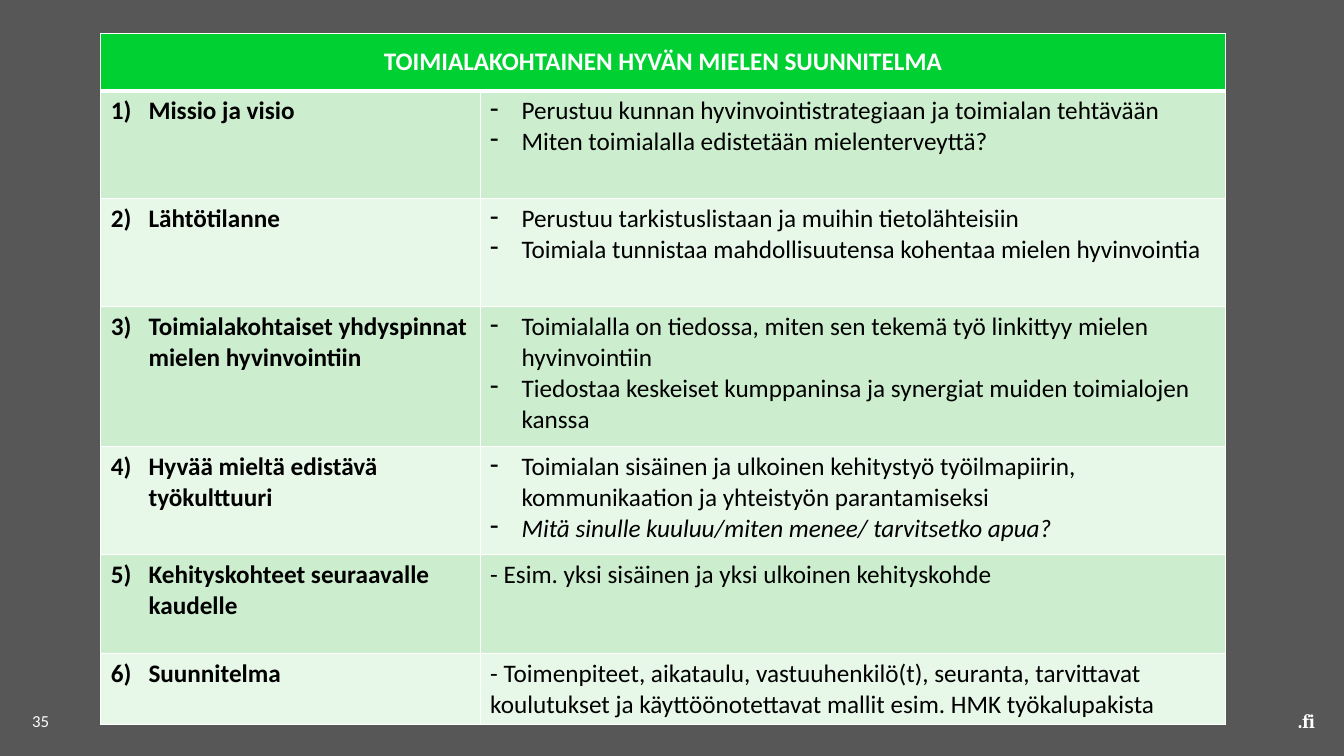
from lxml.etree import SubElement
from pptx import Presentation
from pptx.dml.color import RGBColor
from pptx.enum.text import MSO_ANCHOR as Anchor, PP_ALIGN as Align
from pptx.oxml.ns import qn
from pptx.util import Cm, Pt

COLORS = {
    "background": "575757",
    "header": "00D032",
    "odd": "CCEECE",
    "even": "E7F7E8",
    "white": "FFFFFF",
    "black": "000000",
}
COLUMN_WIDTHS = [9.56, 18.78]
ROW_HEIGHTS = [1.45, 2.72, 2.72, 3.53, 2.72, 2.49, 1.45]
TITLE = "TOIMIALAKOHTAINEN HYVÄN MIELEN SUUNNITELMA"
TOPICS = [
    ("Missio ja visio", [
        "Perustuu kunnan hyvinvointistrategiaan ja toimialan tehtävään",
        "Miten toimialalla edistetään mielenterveyttä?",
    ]),
    ("Lähtötilanne", [
        "Perustuu tarkistuslistaan ja muihin tietolähteisiin",
        "Toimiala tunnistaa mahdollisuutensa kohentaa mielen hyvinvointia",
    ]),
    ("Toimialakohtaiset yhdyspinnat mielen hyvinvointiin", [
        "Toimialalla on tiedossa, miten sen tekemä työ linkittyy mielen hyvinvointiin",
        "Tiedostaa keskeiset kumppaninsa ja synergiat muiden toimialojen kanssa",
    ]),
    ("Hyvää mieltä edistävä työkulttuuri", [
        "Toimialan sisäinen ja ulkoinen kehitystyö työilmapiirin, "
        "kommunikaation ja yhteistyön parantamiseksi",
        "Mitä sinulle kuuluu/miten menee/ tarvitsetko apua?",
    ]),
    ("Kehityskohteet seuraavalle kaudelle", [
        "- Esim. yksi sisäinen ja yksi ulkoinen kehityskohde",
    ]),
    ("Suunnitelma", [
        "- Toimenpiteet, aikataulu, vastuuhenkilö(t), seuranta, tarvittavat koulutukset "
        "ja käyttöönotettavat mallit esim. HMK työkalupakista",
    ]),
]
ITALIC_TEXT = TOPICS[3][1][1]


def rgb(color):
    return RGBColor.from_string(COLORS[color])


class SlideBuilder:
    """Holds the text style and the slide being built."""

    text_style = {"name": "Calibri", "size": Pt(18), "bold": False, "italic": False}

    def __init__(self, slide):
        self.slide = slide
        slide.background.fill.solid()
        slide.background.fill.fore_color.rgb = rgb("background")

    def add_text(self, paragraph, text, color="black", **style):
        run = paragraph.add_run()
        run.text = text
        for key, value in {**self.text_style, **style}.items():
            setattr(run.font, key, value)
        run.font.color.rgb = rgb(color)

    def bullet(self, paragraph, indent, tag, **attributes):
        properties = paragraph._p.get_or_add_pPr()
        properties.set("marL", str(Cm(indent)))
        properties.set("indent", str(-Cm(indent)))
        SubElement(properties, qn("a:buFontTx"))
        SubElement(properties, qn(tag), attributes)

    def text_box(self, text, left, top, width, height, anchor=Anchor.TOP, **style):
        shape = self.slide.shapes.add_textbox(Cm(left), Cm(top), Cm(width), Cm(height))
        frame = shape.text_frame
        frame.word_wrap = True
        frame.vertical_anchor = anchor
        self.add_text(frame.paragraphs[0], text, "white", **style)

    def table(self, left, top, widths, heights):
        table = self.slide.shapes.add_table(
            len(heights), len(widths), Cm(left), Cm(top), Cm(sum(widths)), Cm(sum(heights))
        ).table
        table.horz_banding = table.first_row = False
        for column, width in zip(table.columns, widths):
            column.width = Cm(width)
        for row, height in zip(table.rows, heights):
            row.height = Cm(height)
        return table

    def paint(self, cell, fill, top=1, bottom=1):
        """Gives a cell its fill and white borders, widths in points."""
        properties = cell._tc.get_or_add_tcPr()
        for side, width in {"L": 1, "R": 1, "T": top, "B": bottom}.items():
            line = SubElement(properties, qn(f"a:ln{side}"), w=str(Pt(width)))
            solid = SubElement(line, qn("a:solidFill"))
            SubElement(solid, qn("a:srgbClr"), val=COLORS["white"])
        cell.fill.solid()
        cell.fill.fore_color.rgb = rgb(fill)

    def header(self, table, text):
        for cell in table.rows[0].cells:
            self.paint(cell, "header", bottom=3)
        title = table.cell(0, 0)
        title.merge(table.cell(0, len(table.columns) - 1))
        title.vertical_anchor = Anchor.MIDDLE
        paragraph = title.text_frame.paragraphs[0]
        paragraph.alignment = Align.CENTER
        self.add_text(paragraph, text, "white", bold=True)

    def topic(self, table, number, name, notes):
        name_cell, notes_cell = table.rows[number].cells
        for cell in (name_cell, notes_cell):
            self.paint(cell, "odd" if number % 2 else "even", top=3 if number == 1 else 1)
        paragraph = name_cell.text_frame.paragraphs[0]
        self.bullet(paragraph, 0.95, "a:buAutoNum", type="arabicParenR", startAt=str(number))
        self.add_text(paragraph, name, bold=True)
        frame = notes_cell.text_frame
        for index, note in enumerate(notes):
            paragraph = frame.add_paragraph() if index else frame.paragraphs[0]
            if not note.startswith("-"):
                self.bullet(paragraph, 0.79, "a:buChar", char="-")
            self.add_text(paragraph, note, italic=note == ITALIC_TEXT)


def main():
    presentation = Presentation()
    presentation.slide_width, presentation.slide_height = Cm(33.87), Cm(19.05)
    builder = SlideBuilder(presentation.slides.add_slide(presentation.slide_layouts[6]))
    builder.text_box(".fi", 32.46, 17.73, 1.17, 0.86, name="Cambria", size=Pt(14), bold=True)
    builder.text_box("35", 0.56, 17.65, 2.46, 1.02, Anchor.MIDDLE, size=Pt(12))
    table = builder.table(2.54, 0.84, COLUMN_WIDTHS, ROW_HEIGHTS)
    builder.header(table, TITLE)
    for number, (name, notes) in enumerate(TOPICS, 1):
        builder.topic(table, number, name, notes)
    presentation.save("out.pptx")


if __name__ == "__main__":
    main()
